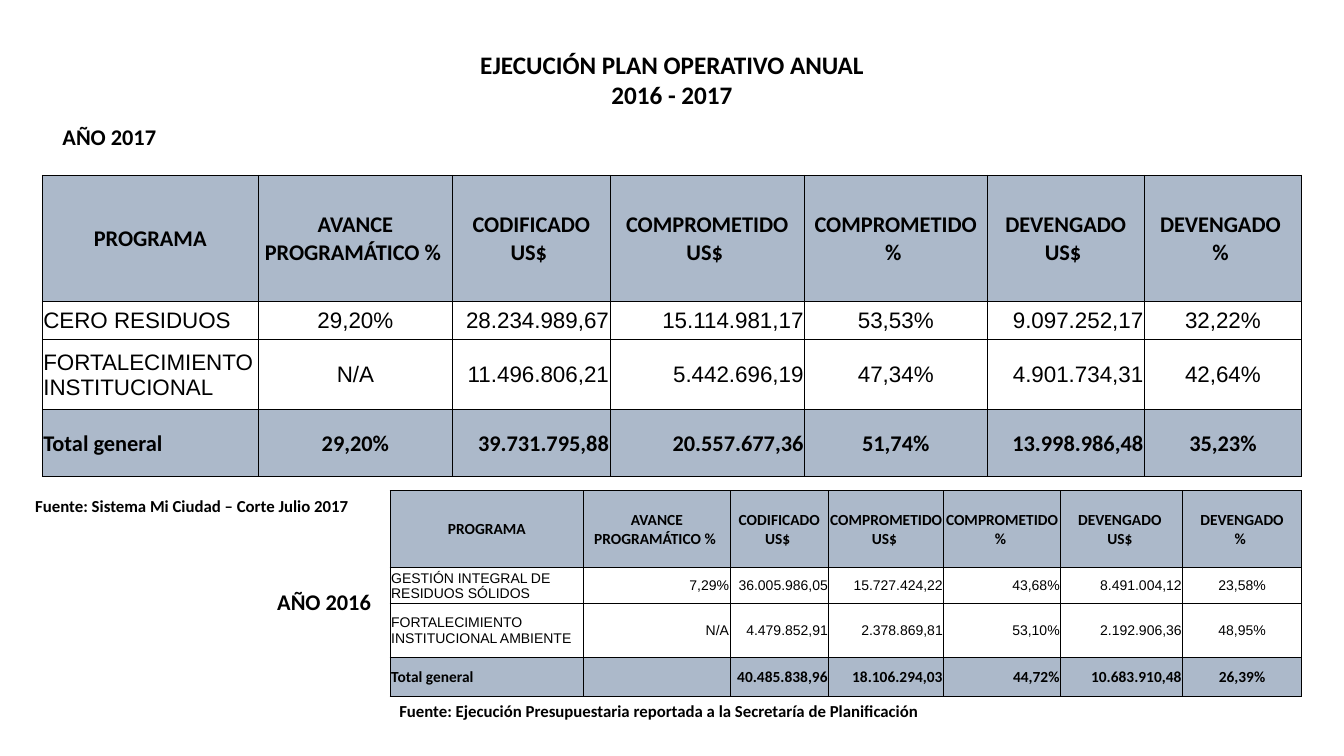
from lxml import etree
from pptx import Presentation
from pptx.dml.color import RGBColor
from pptx.enum.text import MSO_ANCHOR, PP_ALIGN
from pptx.oxml.ns import qn
from pptx.util import Pt

PX = 9144  # 100 px to the inch
MIDDLE = MSO_ANCHOR.MIDDLE
ALIGN = {"l": PP_ALIGN.LEFT, "c": PP_ALIGN.CENTER, "r": PP_ALIGN.RIGHT}
BLACK, HEADER_FILL = "000000", "ACB9CA"
OUTER, INNER = Pt(1), Pt(0.5)


def write(frame, text, align, **font):
    frame.text = text
    for paragraph in frame.paragraphs:
        paragraph.alignment = ALIGN[align]
        for run in paragraph.runs:
            run.font.color.rgb = RGBColor.from_string(BLACK)
            for key, value in font.items():
                setattr(run.font, key, value)


def add_border(cell, side, width):
    line = etree.SubElement(cell._tc.get_or_add_tcPr(), qn(f"a:ln{side}"), w=str(width))
    fill = etree.SubElement(line, qn("a:solidFill"))
    etree.SubElement(fill, qn("a:srgbClr"), val=BLACK)


prs = Presentation()
prs.slide_width, prs.slide_height = 1333 * PX, 750 * PX
slide = prs.slides.add_slide(prs.slide_layouts[6])

year_2017 = {
    "at": (42, 174), "columns": (214, 193, 156, 193, 181, 156, 156),
    "heights": (125, 38, 69, 67), "aligns": "lcrrcrc", "head_size": 16, "body_size": 16,
    "rows": [
        ("PROGRAMA", "AVANCE PROGRAMÁTICO % ", "CODIFICADO US$ ", "COMPROMETIDO US$ ",
         "COMPROMETIDO % ", "DEVENGADO US$ ", "DEVENGADO \n% "),
        ("CERO RESIDUOS", "29,20%", "28.234.989,67", "15.114.981,17", "53,53%",
         "9.097.252,17", "32,22%"),
        ("FORTALECIMIENTO INSTITUCIONAL", "N/A", "11.496.806,21", "5.442.696,19", "47,34%",
         "4.901.734,31", "42,64%"),
        ("Total general", "29,20%", "39.731.795,88", "20.557.677,36", "51,74%",
         "13.998.986,48", "35,23%"),
    ],
}
year_2016 = {
    "at": (387, 487), "columns": (192, 145, 98, 114, 116, 121, 118),
    "heights": (76, 36, 53, 39), "aligns": "lrrrrrc", "head_size": 11, "body_size": 10,
    "rows": [
        ("PROGRAMA", "AVANCE PROGRAMÁTICO % ", "CODIFICADO US$ ", "COMPROMETIDO US$ ",
         "COMPROMETIDO % ", "DEVENGADO \nUS$ ", "DEVENGADO\n% "),
        ("GESTIÓN INTEGRAL DE RESIDUOS SÓLIDOS", "7,29%", "36.005.986,05", "15.727.424,22",
         "43,68%", "8.491.004,12", "23,58%"),
        ("FORTALECIMIENTO INSTITUCIONAL AMBIENTE", "N/A", "4.479.852,91", "2.378.869,81",
         "53,10%", "2.192.906,36", "48,95%"),
        ("Total general", "", "40.485.838,96", "18.106.294,03", "44,72%",
         "10.683.910,48", "26,39%"),
    ],
}

for budget in (year_2017, year_2016):
    rows, columns, heights = budget["rows"], budget["columns"], budget["heights"]
    last_row, last_column = len(rows) - 1, len(columns) - 1
    left, top = budget["at"]
    table = slide.shapes.add_table(len(rows), len(columns), left * PX, top * PX,
                                   sum(columns) * PX, sum(heights) * PX).table
    table.first_row = table.horz_banding = False
    for column, width in zip(table.columns, columns):
        column.width = width * PX
    for r, row in enumerate(rows):
        table.rows[r].height = heights[r] * PX
        shaded = r in (0, last_row)
        for c, text in enumerate(row):
            cell = table.cell(r, c)
            cell.vertical_anchor = MIDDLE
            cell.margin_left = cell.margin_right = cell.margin_top = PX
            cell.margin_bottom = 0
            write(cell.text_frame, text, budget["aligns"][c] if r else "c", bold=shaded,
                  name="Calibri" if shaded else "Arial",
                  size=Pt(budget["head_size" if shaded else "body_size"]))
            for side, on_edge in (("L", c == 0), ("R", c == last_column),
                                  ("T", r == 0), ("B", r == last_row)):
                add_border(cell, side, OUTER if on_edge else INNER)
            if shaded:
                cell.fill.solid()
                cell.fill.fore_color.rgb = RGBColor.from_string(HEADER_FILL)
            else:
                cell.fill.background()

labels = [
    (42, 40, 1249, 77, "EJECUCIÓN PLAN OPERATIVO ANUAL\n2016 - 2017", 18, "c"),
    (53, 97, 457, 77, "AÑO 2017", 16, "l"),
    (266, 558, 457, 77, "AÑO 2016", 16, "l"),
    (26, 478, 457, 48, "Fuente: Sistema Mi Ciudad – Corte Julio 2017", 12, "l"),
    (387, 681, 684, 48,
     "Fuente: Ejecución Presupuestaria reportada a la Secretaría de Planificación", 12, "l"),
]
for left, top, width, height, text, size, align in labels:
    frame = slide.shapes.add_textbox(left * PX, top * PX, width * PX, height * PX).text_frame
    frame.word_wrap = True
    frame.vertical_anchor = MIDDLE
    frame.margin_left = frame.margin_right = 9 * PX
    frame.margin_top = frame.margin_bottom = 4 * PX
    write(frame, text, align, name="Calibri", size=Pt(size), bold=True)

prs.save("out.pptx")
